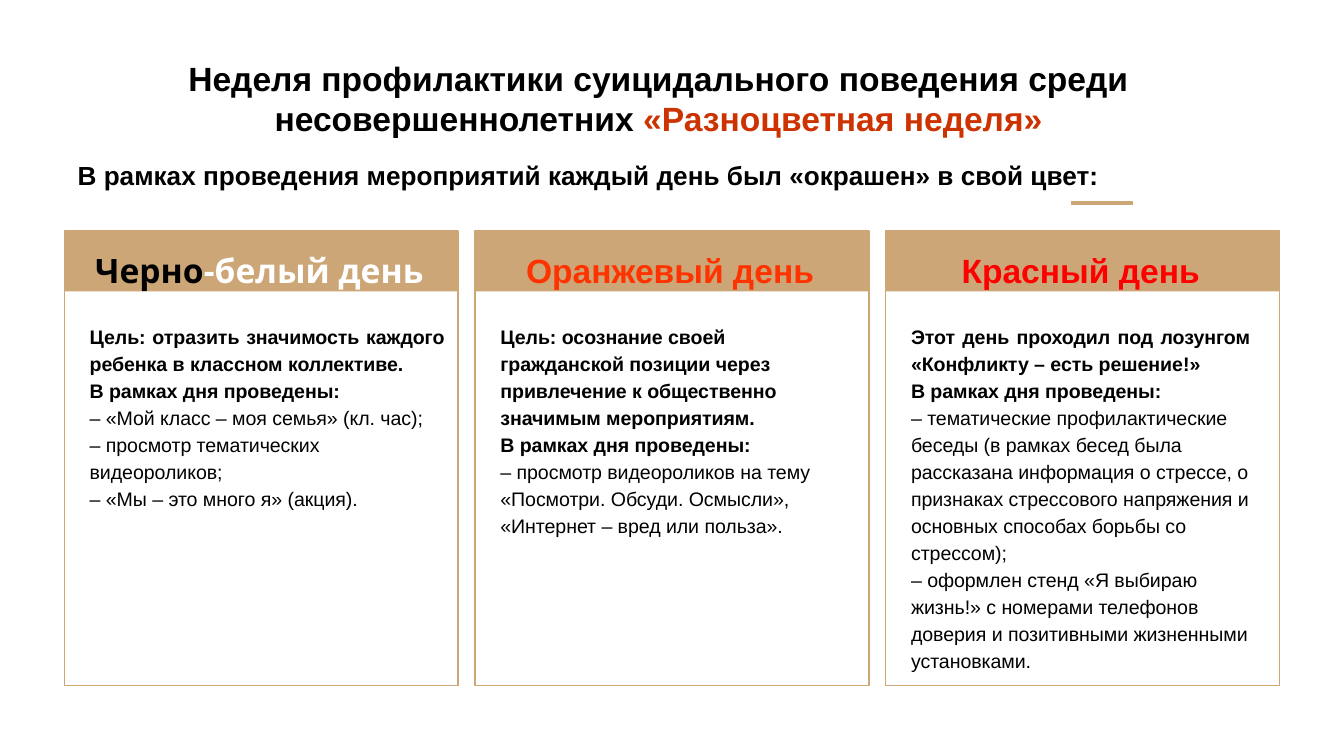
from dataclasses import dataclass

from lxml.etree import SubElement
from pptx import Presentation
from pptx.dml.color import RGBColor
from pptx.enum.shapes import MSO_CONNECTOR, MSO_SHAPE
from pptx.enum.text import MSO_ANCHOR, PP_ALIGN
from pptx.oxml.ns import qn
from pptx.util import Pt


@dataclass(frozen=True)
class Theme:
    black: str = "000000"
    white: str = "FFFFFF"
    sand: str = "CCA677"
    brick: str = "CC3300"
    orange: str = "FF3300"
    red: str = "FF0000"
    font: str = "Arial"
    accent_font: str = "Open Sans"
    title_size: float = 18
    subtitle_size: float = 14
    body_size: float = 10.5


THEME = Theme()
CARD_LEFT, CARD_TOP, CARD_PITCH = 34.5, 123.8, 220
CARD_WIDTH, CARD_HEIGHT, HEADER_HEIGHT = 211, 243.4, 32.4
TEXT_OFFSET, TEXT_WIDTH, BODY_TOP = 6.5, 196, 165
INSET = 7.2
HELD = "В рамках дня проведены:"

CARDS = [
    {
        "heading": [("Черно", THEME.black), ("-белый день", THEME.white)],
        "font": THEME.accent_font,
        "goals": ["Цель: отразить значимость каждого ребенка в классном коллективе."],
        "goal_align": PP_ALIGN.JUSTIFY,
        "events": [
            "– «Мой класс – моя семья» (кл. час);",
            "– просмотр тематических видеороликов;",
            "– «Мы – это много я» (акция).",
        ],
        "body_width": 204.5,
        "body_height": 119,
    },
    {
        "heading": [("Оранжевый день", THEME.orange)],
        "font": THEME.font,
        "goals": [
            "Цель: осознание своей гражданской позиции через привлечение "
            "к общественно значимым мероприятиям."
        ],
        "goal_align": PP_ALIGN.LEFT,
        "events": [
            "– просмотр видеороликов на тему «Посмотри. Обсуди. Осмысли», "
            "«Интернет – вред или польза»."
        ],
        "body_width": TEXT_WIDTH,
        "body_height": 130,
    },
    {
        "heading": [("Красный день", THEME.red)],
        "font": THEME.font,
        "goals": ["Этот день проходил под лозунгом «Конфликту – есть решение!»"],
        "goal_align": PP_ALIGN.JUSTIFY,
        "events": [
            "– тематические профилактические беседы (в рамках бесед была рассказана "
            "информация о стрессе, о признаках стрессового напряжения и основных "
            "способах борьбы со стрессом);",
            "– оформлен стенд «Я выбираю жизнь!» с номерами телефонов доверия "
            "и позитивными жизненными установками.",
        ],
        "body_width": TEXT_WIDTH,
        "body_height": 193,
    },
]


def color(value):
    return RGBColor.from_string(value)


def add_text_box(slide, left, top, width, height, anchor=MSO_ANCHOR.TOP):
    shape = slide.shapes.add_textbox(Pt(left), Pt(top), Pt(width), Pt(height))
    frame = shape.text_frame
    frame.word_wrap = True
    frame.vertical_anchor = anchor
    frame.margin_left = frame.margin_right = Pt(INSET)
    frame.margin_top = frame.margin_bottom = Pt(INSET)
    return frame


def write(frame, runs, size, font=THEME.font, bold=True, align=PP_ALIGN.LEFT, spacing=1.0):
    paragraph = frame.paragraphs[0]
    if paragraph.runs:
        paragraph = frame.add_paragraph()
    paragraph.alignment = align
    paragraph.line_spacing = spacing
    for text, run_color in runs:
        run = paragraph.add_run()
        run.text = text
        run.font.name = font
        run.font.size = Pt(size)
        run.font.bold = bold
        run.font.color.rgb = color(run_color)


def add_rectangle(slide, left, height, fill=None, line=None):
    shape = slide.shapes.add_shape(
        MSO_SHAPE.RECTANGLE, Pt(left), Pt(CARD_TOP), Pt(CARD_WIDTH), Pt(height)
    )
    shape.shadow.inherit = False
    if fill:
        shape.fill.solid()
        shape.fill.fore_color.rgb = color(fill)
    else:
        shape.fill.background()
    if line:
        shape.line.color.rgb = color(line)
        shape.line.width = Pt(0.75)
    else:
        shape.line.fill.background()


def add_accent_line(slide, left, right, top):
    connector = slide.shapes.add_connector(
        MSO_CONNECTOR.STRAIGHT, Pt(left), Pt(top), Pt(right), Pt(top)
    )
    connector.line.color.rgb = color(THEME.sand)
    connector.line.width = Pt(2.25)
    SubElement(connector.element.spPr, qn("a:effectLst"))


def add_card(slide, left, card):
    add_rectangle(slide, left, CARD_HEIGHT, line=THEME.sand)
    add_rectangle(slide, left, HEADER_HEIGHT, fill=THEME.sand)
    text_left = left + TEXT_OFFSET
    heading = add_text_box(slide, text_left, CARD_TOP - 0.5, TEXT_WIDTH, HEADER_HEIGHT)
    write(heading, card["heading"], THEME.title_size, font=card["font"],
          align=PP_ALIGN.CENTER, spacing=1.15)
    body = add_text_box(slide, text_left, BODY_TOP, card["body_width"], card["body_height"])
    for text in card["goals"] + [HELD]:
        write(body, [(text, THEME.black)], THEME.body_size,
              align=card["goal_align"], spacing=1.15)
    for text in card["events"]:
        write(body, [(text, THEME.black)], THEME.body_size, bold=False, spacing=1.15)


def main():
    presentation = Presentation()
    presentation.slide_width, presentation.slide_height = Pt(720), Pt(405)
    slide = presentation.slides.add_slide(presentation.slide_layouts[6])

    title = add_text_box(slide, 17.3, 15.8, 671, 65.5, anchor=MSO_ANCHOR.BOTTOM)
    write(title, [
        ("Неделя профилактики суицидального поведения среди несовершеннолетних ", THEME.black),
        ("«Разноцветная неделя»", THEME.brick),
    ], THEME.title_size, align=PP_ALIGN.CENTER)

    add_accent_line(slide, 574, 607, 108.7)
    for index, card in enumerate(CARDS):
        add_card(slide, CARD_LEFT + index * CARD_PITCH, card)

    subtitle = add_text_box(slide, 34.5, 80, 671, 29.5, anchor=MSO_ANCHOR.BOTTOM)
    write(subtitle, [
        ("В рамках проведения мероприятий каждый день был «окрашен» в свой цвет:", THEME.black),
    ], THEME.subtitle_size, align=PP_ALIGN.JUSTIFY)

    presentation.save("out.pptx")


if __name__ == "__main__":
    main()
